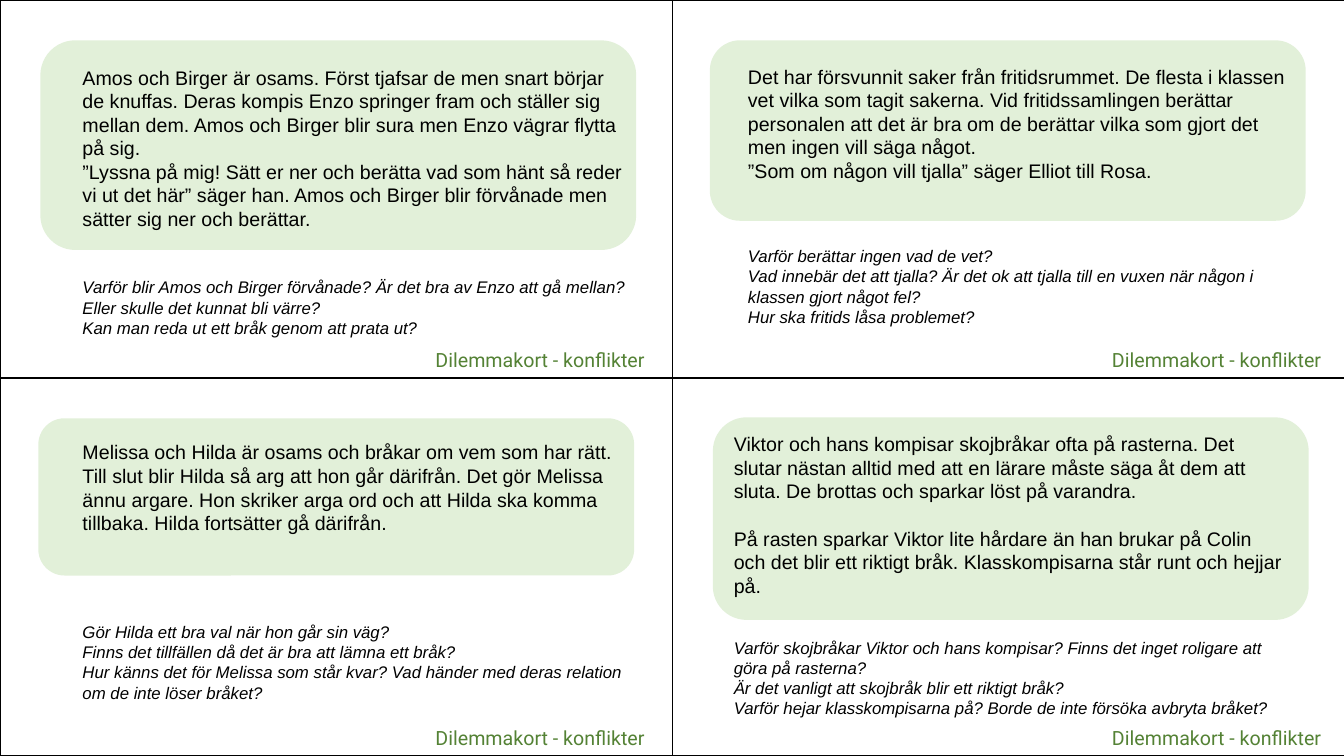
import pptx
import pptx.util
import pptx.dml.color
import pptx.enum.shapes
from pptx.util import Inches, Pt

MSO_SHAPE = pptx.enum.shapes.MSO_SHAPE


def color(hex_code):
    return pptx.dml.color.RGBColor.from_string(hex_code)


def add_text(left, top, width, height, paragraphs):
    """Each paragraph is (text, font, size, italic, hex colour, space before)."""
    frame = slide.shapes.add_textbox(
        Inches(left), Inches(top), Inches(width), Inches(height)).text_frame
    frame.word_wrap = True
    for number, (text, font, size, italic, ink, gap) in enumerate(paragraphs):
        paragraph = frame.add_paragraph() if number else frame.paragraphs[0]
        paragraph.text = text
        paragraph.space_before = Pt(gap)
        for run in paragraph.runs:
            run.font.name = font
            run.font.size = Pt(size)
            run.font.italic = italic
            run.font.color.rgb = color(ink)


presentation = pptx.Presentation()
presentation.slide_width = Inches(13.33)
presentation.slide_height = Inches(7.5)
slide = presentation.slides.add_slide(presentation.slide_layouts[6])

CARD_WIDTH, CARD_HEIGHT = 6.67, 3.75

# Cards, row by row: panel (left, top, height), text (left, top, height),
# then the story and the questions as (text, space before)
cards = [
    dict(
        panel=(0.4, 0.4, 2.08), body=(0.72, 0.6, 2.83),
        story=[
            ("Amos och Birger är osams. Först tjafsar de men snart börjar de knuffas. "
             "Deras kompis Enzo springer fram och ställer sig mellan dem. Amos och "
             "Birger blir sura men Enzo vägrar flytta på sig.", 0),
            ("”Lyssna på mig! Sätt er ner och berätta vad som hänt så reder vi ut det "
             "här” säger han. Amos och Birger blir förvånade men sätter sig ner och "
             "berättar.", 0),
        ],
        questions=[
            ("Varför blir Amos och Birger förvånade? Är det bra av Enzo att gå mellan? "
             "Eller skulle det kunnat bli värre?", 33.6),
            ("Kan man reda ut ett bråk genom att prata ut?", 0),
        ]),
    dict(
        panel=(7.04, 0.4, 1.79), body=(7.32, 0.59, 2.73),
        story=[
            ("Det har försvunnit saker från fritidsrummet. De flesta i klassen vet "
             "vilka som tagit sakerna. Vid fritidssamlingen berättar personalen att "
             "det är bra om de berättar vilka som gjort det men ingen vill säga något.", 0),
            ("”Som om någon vill tjalla” säger Elliot till Rosa.", 0),
        ],
        questions=[
            ("Varför berättar ingen vad de vet?", 45.6),
            ("Vad innebär det att tjalla? Är det ok att tjalla till en vuxen när någon "
             "i klassen gjort något fel?", 0),
            ("Hur ska fritids låsa problemet?", 0),
        ]),
    dict(
        panel=(0.38, 4.15, 1.56), body=(0.72, 4.32, 2.73),
        story=[
            ("Melissa och Hilda är osams och bråkar om vem som har rätt. Till slut "
             "blir Hilda så arg att hon går därifrån. Det gör Melissa ännu argare. "
             "Hon skriker arga ord och att Hilda ska komma tillbaka. Hilda fortsätter "
             "gå därifrån.", 0),
        ],
        questions=[
            ("Gör Hilda ett bra val när hon går sin väg?", 62.4),
            ("Finns det tillfällen då det är bra att lämna ett bråk?", 0),
            ("Hur känns det för Melissa som står kvar? Vad händer med deras relation "
             "om de inte löser bråket?", 0),
        ]),
    dict(
        panel=(7.07, 4.14, 2.01), body=(7.18, 4.24, 3.16),
        story=[
            ("Viktor och hans kompisar skojbråkar ofta på rasterna. Det slutar nästan "
             "alltid med att en lärare måste säga åt dem att sluta. De brottas och "
             "sparkar löst på varandra.", 0),
            ("På rasten sparkar Viktor lite hårdare än han brukar på Colin och det "
             "blir ett riktigt bråk. Klasskompisarna står runt och hejjar på.", 16.8),
        ],
        questions=[
            ("Varför skojbråkar Viktor och hans kompisar? Finns det inget roligare att "
             "göra på rasterna?", 28.8),
            ("Är det vanligt att skojbråk blir ett riktigt bråk?", 0),
            ("Varför hejar klasskompisarna på? Borde de inte försöka avbryta bråket?", 0),
        ]),
]

for index, card in enumerate(cards):
    row, column = divmod(index, 2)

    # Green story panel
    left, top, height = card["panel"]
    panel = slide.shapes.add_shape(
        MSO_SHAPE.ROUNDED_RECTANGLE,
        Inches(left), Inches(top), Inches(5.91), Inches(height))
    panel.shadow.inherit = False
    panel.fill.solid()
    panel.fill.fore_color.rgb = color("E2F0D9")
    panel.line.fill.background()

    # Card border
    border = slide.shapes.add_shape(
        MSO_SHAPE.RECTANGLE,
        Inches(column * CARD_WIDTH), Inches(row * CARD_HEIGHT),
        Inches(CARD_WIDTH), Inches(CARD_HEIGHT))
    border.shadow.inherit = False
    border.fill.background()
    border.line.color.rgb = color("000000")
    border.line.width = Pt(1)

    # Card label
    add_text(4.22 + column * 6.71, 3.4 + row * CARD_HEIGHT, 2.45, 0.34,
             [("Dilemmakort - konflikter", "Roboto", 14, False, "548235", 0)])

    # Story and questions
    left, top, height = card["body"]
    add_text(left, top, 5.64, height,
             [(text, "Arial", 14, False, "000000", gap) for text, gap in card["story"]]
             + [(text, "Arial", 12, True, "000000", gap) for text, gap in card["questions"]])

presentation.save("out.pptx")
